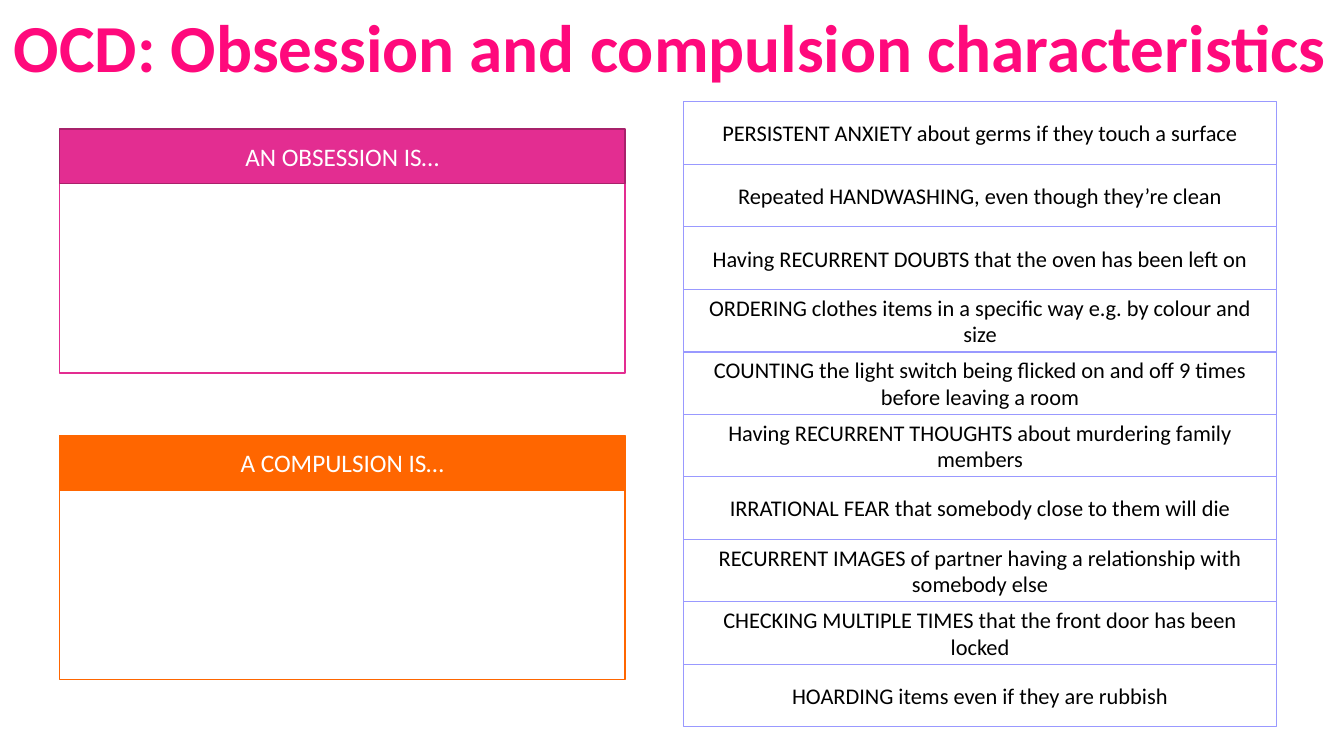
"""Build the OCD obsession and compulsion sorting slide."""
from dataclasses import dataclass

from pptx import Presentation
from pptx.dml.color import RGBColor
from pptx.enum import shapes, text
from pptx.oxml import parse_xml
from pptx.oxml.ns import nsdecls
from pptx.util import Inches, Pt


@dataclass(frozen=True)
class Theme:
    font: str = "Calibri"
    title_size: int = 48
    heading_size: int = 18
    card_size: int = 16
    white: str = "FFFFFF"
    black: str = "000000"
    card_line: str = "9999FF"
    pink: str = "E32D91"
    dark_pink: str = "A8216B"
    orange: str = "FF6600"
    title_stops: tuple[tuple[int, str], ...] = ((0, "FF87B8"), (75, "FF097C"), (100, "C9006F"))


@dataclass(frozen=True)
class Panel:
    heading: str
    top: float
    fill: str
    heading_line: str


T = Theme()
TITLE = "OCD: Obsession and compulsion characteristics"
PANELS = (
    Panel("AN OBSESSION IS…", 1.28, T.pink, T.dark_pink),
    Panel("A COMPULSION IS…", 4.32, T.orange, T.orange),
)
CARDS = (
    "PERSISTENT ANXIETY about germs if they touch a surface",
    "Repeated HANDWASHING, even though they’re clean",
    "Having RECURRENT DOUBTS that the oven has been left on",
    "ORDERING clothes items in a specific way e.g. by colour and size",
    "COUNTING the light switch being flicked on and off 9 times before leaving a room",
    "Having RECURRENT THOUGHTS about murdering family members",
    "IRRATIONAL FEAR that somebody close to them will die",
    "RECURRENT IMAGES of partner having a relationship with somebody else",
    "CHECKING MULTIPLE TIMES that the front door has been locked",
    "HOARDING items even if they are rubbish",
)
PANEL_LEFT, PANEL_WIDTH, HEADING_HEIGHT, BODY_HEIGHT = 0.59, 5.61, 0.54, 1.88
CARD_LEFT, CARD_TOP, CARD_WIDTH, CARD_HEIGHT = 6.78, 1.01, 5.88, 0.62


def write(sp, words: str, *, size: int, color: str | None = None, bold: bool = False,
          anchor=text.MSO_ANCHOR.MIDDLE, wrap: bool = True):
    tf = sp.text_frame
    tf.word_wrap = wrap
    tf.vertical_anchor = anchor
    p = tf.paragraphs[0]
    p.alignment = text.PP_ALIGN.CENTER
    r = p.add_run()
    r.text = words
    r.font.name, r.font.size, r.font.bold = T.font, Pt(size), bold
    if color:
        r.font.color.rgb = RGBColor.from_string(color)
    return r


def add_box(s, left: float, top: float, width: float, height: float, fill: str, line: str):
    sp = s.shapes.add_shape(shapes.MSO_SHAPE.RECTANGLE, Inches(left), Inches(top),
                            Inches(width), Inches(height))
    sp.shadow.inherit = False
    sp.fill.solid()
    sp.fill.fore_color.rgb = RGBColor.from_string(fill)
    sp.line.color.rgb = RGBColor.from_string(line)
    sp.line.width = Pt(1)
    return sp


def add_title(s) -> None:
    sp = s.shapes.title
    sp.left, sp.top, sp.width, sp.height = (Inches(v) for v in (-0.03, 0, 13.36, 0.91))
    r = write(sp, TITLE, size=T.title_size, bold=True, anchor=text.MSO_ANCHOR.TOP, wrap=False)
    sp.text_frame.auto_size = text.MSO_AUTO_SIZE.SHAPE_TO_FIT_TEXT
    stops = "".join(f'<a:gs pos="{pos * 1000}"><a:srgbClr val="{color}"/></a:gs>'
                    for pos, color in T.title_stops)
    r.font._element.insert(0, parse_xml(
        f'<a:gradFill {nsdecls("a")}><a:gsLst>{stops}</a:gsLst>'
        '<a:lin ang="5400000" scaled="0"/></a:gradFill>'))


def add_panel(s, panel: Panel) -> None:
    add_box(s, PANEL_LEFT, panel.top + HEADING_HEIGHT, PANEL_WIDTH, BODY_HEIGHT,
            T.white, panel.fill)
    sp = add_box(s, PANEL_LEFT, panel.top, PANEL_WIDTH, HEADING_HEIGHT,
                 panel.fill, panel.heading_line)
    write(sp, panel.heading, size=T.heading_size, color=T.white)


def add_card(s, row: int, words: str) -> None:
    sp = add_box(s, CARD_LEFT, CARD_TOP + row * CARD_HEIGHT, CARD_WIDTH, CARD_HEIGHT,
                 T.white, T.card_line)
    write(sp, words, size=T.card_size, color=T.black)


def main() -> None:
    prs = Presentation()
    prs.slide_width, prs.slide_height = Inches(13.33), Inches(7.5)
    s = prs.slides.add_slide(prs.slide_layouts[5])
    add_title(s)
    for row, words in enumerate(CARDS):
        add_card(s, row, words)
    for panel in PANELS:
        add_panel(s, panel)
    prs.save("out.pptx")


if __name__ == "__main__":
    main()
